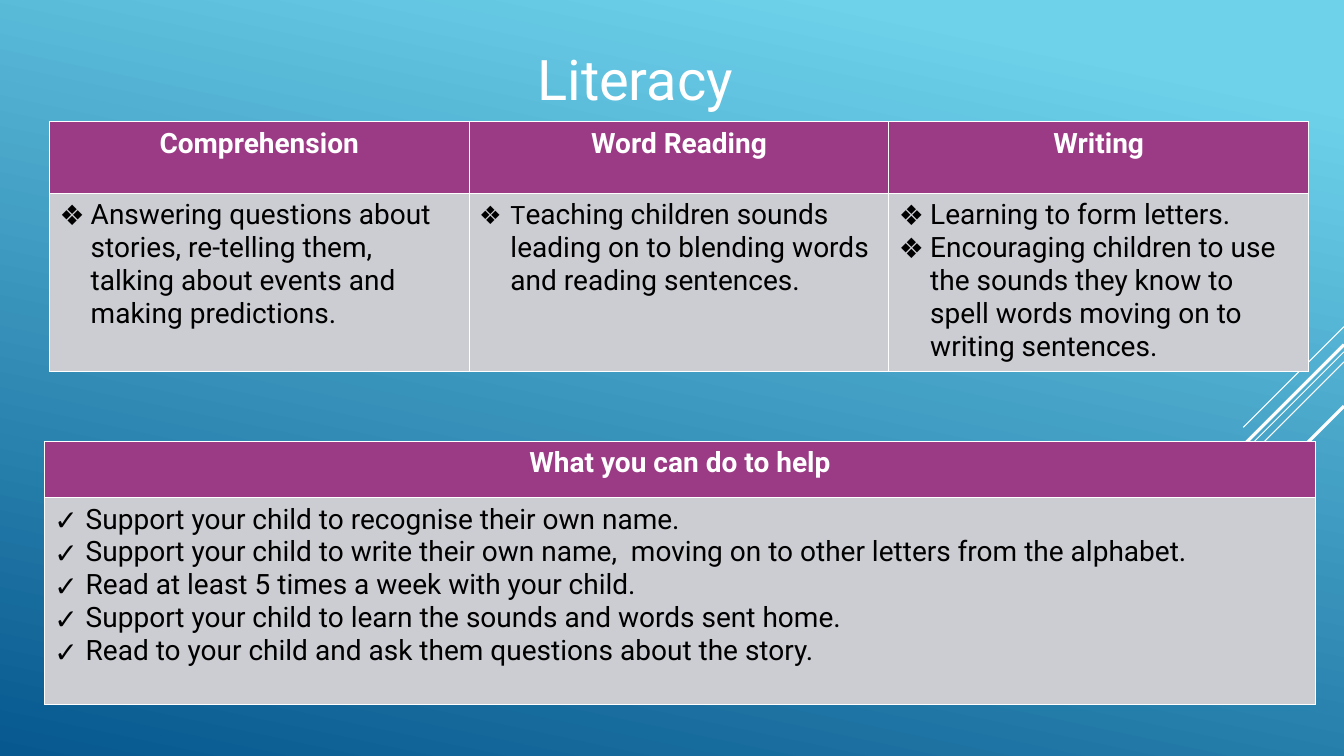
from lxml import etree
from pptx import Presentation
from pptx.dml.color import RGBColor
from pptx.enum.shapes import MSO_CONNECTOR
from pptx.enum.text import MSO_ANCHOR, PP_ALIGN
from pptx.oxml.ns import qn
from pptx.util import Inches, Pt

LINE = MSO_CONNECTOR.STRAIGHT
MIDDLE = MSO_ANCHOR.MIDDLE
CENTER = PP_ALIGN.CENTER
WHITE, BLACK, PLUM, GREY = "FFFFFF", "000000", "9C3B85", "CCCDD2"
HEAD = {"size": Pt(20), "name": "Roboto", "bold": True}
BODY = {**HEAD, "bold": False}
TITLE = {**BODY, "size": Pt(40)}

RAYS = [
    (3.24, 1.0, 0.75),
    (3.49, 3.26, 0.75),
    (3.59, 2.07, 0.75),
    (3.42, 1.91, 2.25),
    (4.03, 1.39, 2.25),
]
HELP = [("What you can do to help", [
    ["Support your child to recognise their own name."],
    ["Support your child to write their own name,  moving on to other letters from the alphabet."],
    ["Read at least 5 times a week with your child."],
    ["Support your child to learn the sounds and words sent home."],
    ["Read to your child and ask them questions about the story."],
])]
SKILLS = [
    ("Comprehension", [
        ["Answering questions about stories, re-telling them, talking about events and making predictions."],
    ]),
    ("Word Reading", [
        [("T", 18), "eaching children sounds leading on to blending words and reading sentences."],
    ]),
    ("Writing", [
        ["Learning to form letters."],
        ["Encouraging children to use the sounds they know to spell words moving on to writing sentences."],
    ]),
]


def color(code):
    return RGBColor.from_string(code)


def add_run(para, text, form, code):
    run = para.add_run()
    run.text = text
    for key, value in form.items():
        setattr(run.font, key, value)
    run.font.color.rgb = color(code)


def add_mark(para, mark):
    props = para._p.get_or_add_pPr()
    props.set("marL", str(Inches(0.31)))
    props.set("indent", str(-Inches(0.31)))
    etree.SubElement(props, qn("a:buFont"), typeface="Wingdings" if not mark else "Segoe UI Symbol")
    etree.SubElement(props, qn("a:buChar"), char=mark)


def style_cell(cell, code):
    cell.fill.solid()
    cell.fill.fore_color.rgb = color(code)
    props = cell._tc.get_or_add_tcPr()
    for i, side in enumerate(("lnL", "lnR", "lnT", "lnB")):
        edge = etree.Element(qn("a:" + side), w=str(Pt(0.75)))
        fill = etree.SubElement(edge, qn("a:solidFill"))
        etree.SubElement(fill, qn("a:srgbClr"), val=WHITE)
        props.insert(i, edge)


def add_back(slide):
    fill = slide.background.fill
    fill.gradient()
    fill.gradient_angle = 258
    stops = ((0.1, "6ED2EB"), (1, "06588E"))
    for stop, (place, code) in zip(fill.gradient_stops, stops):
        stop.position = place
        stop.color.rgb = color(code)


def add_rays(slide, right):
    for top, span, width in RAYS:
        ray = slide.shapes.add_connector(
            LINE, Inches(right), Inches(top), Inches(right - span), Inches(top + span))
        ray.line.color.rgb = color(WHITE)
        ray.line.width = Pt(width)
        etree.SubElement(ray._element.spPr, qn("a:effectLst"))


def add_title(slide, box, text):
    frame = slide.shapes.add_textbox(*map(Inches, box)).text_frame
    frame.word_wrap = True
    frame.vertical_anchor = MIDDLE
    para = frame.paragraphs[0]
    para.alignment = CENTER
    add_run(para, text, TITLE, WHITE)


def add_grid(slide, box, rows, mark, data):
    grid = slide.shapes.add_table(2, len(data), *map(Inches, box)).table
    for row, height in zip(grid.rows, rows):
        row.height = Inches(height)
    for col, (head, items) in enumerate(data):
        top, cell = grid.cell(0, col), grid.cell(1, col)
        style_cell(top, PLUM)
        style_cell(cell, GREY)
        para = top.text_frame.paragraphs[0]
        para.alignment = CENTER
        add_run(para, head, HEAD, WHITE)
        frame = cell.text_frame
        for i, item in enumerate(items):
            para = frame.add_paragraph() if i else frame.paragraphs[0]
            add_mark(para, mark)
            for part in item:
                text, size = (part, 20) if isinstance(part, str) else part
                add_run(para, text, {**BODY, "size": Pt(size)}, BLACK)


def main():
    deck = Presentation()
    deck.slide_width, deck.slide_height = Inches(13.33), Inches(7.5)
    slide = deck.slides.add_slide(deck.slide_layouts[6])
    add_back(slide)
    add_rays(slide, 13.33)
    add_title(slide, (0.8, 0.38, 11, 0.78), "Literacy")
    add_grid(slide, (0.44, 4.38, 12.61, 2.61), (0.56, 2.05), "✓", HELP)
    add_grid(slide, (0.49, 1.21, 12.49, 2.47), (0.71, 1.65), "❖", SKILLS)
    deck.save("out.pptx")


if __name__ == "__main__":
    main()
